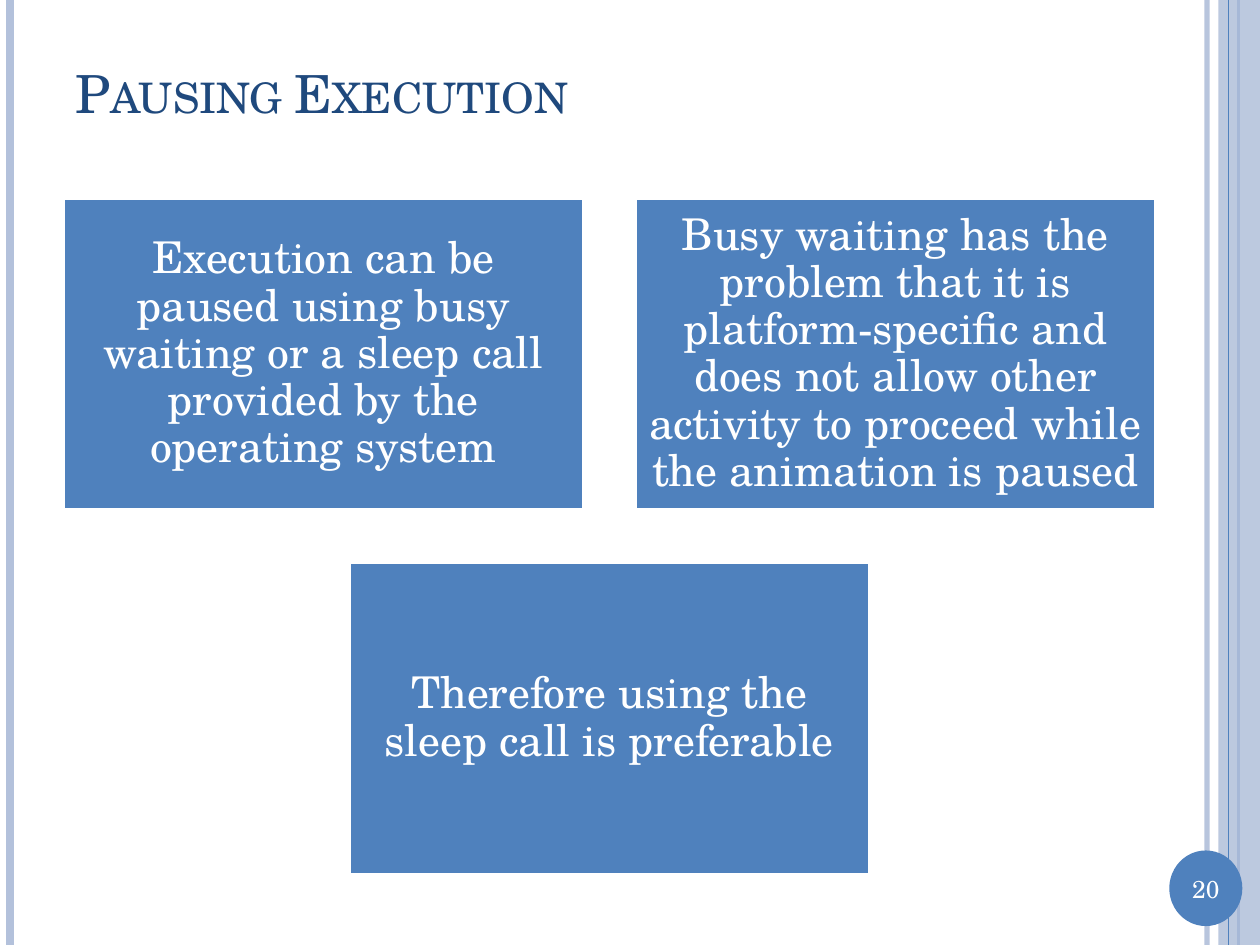
from lxml import etree
from pptx import Presentation
from pptx import util as u
from pptx.dml.color import RGBColor
from pptx.enum import shapes, text
from pptx.oxml import ns

# Content
TITLE = "Pausing Execution"
PAGE = "20"
CARD_ROWS = [
    [
        "Execution can be paused using busy waiting or a sleep call "
        "provided by the operating system",
        "Busy waiting has the problem that it is platform-specific and does "
        "not allow other activity to proceed while the animation is paused",
    ],
    ["Therefore using the sleep call is preferable"],
]

THEME = {
    "font": "TeX Gyre Schola",
    "navy": "1F497D", "blue": "4F81BD", "pale": "B3C1DB", "white": "FFFFFF",
    "title_pt": 30, "card_pt": 25, "page_pt": 14,
}

# Layout, in inches
WIDTH, HEIGHT = 10, 7.5
LEFT, CONTENT_W = 0.5, 8.67
CARD_TOP, CARD_W, CARD_H, GAP = 1.57, 4.13, 2.48, 0.41
BADGE = (9.28, 6.75, 0.58, 0.6)
BAND = (9.67, 0, 0.33, HEIGHT)
# x, colour, width in points, opacity in percent
RULES_BEHIND = [(9.58, "pale", 3, 93), (0.08, "pale", 4.5, 100),
                (9.83, "blue", 1.5, 100)]
RULES_FRONT = [(9.75, "blue", 0.75, 100)]

deck = Presentation()
deck.slide_width, deck.slide_height = u.Inches(WIDTH), u.Inches(HEIGHT)
slide = deck.slides.add_slide(deck.slide_layouts[6])


def inches(values):
    return [u.Inches(value) for value in values]


def color(name):
    return RGBColor.from_string(THEME[name])


def set_opacity(part, percent):
    if percent < 100:
        tone = next(part._element.spPr.iter(ns.qn("a:srgbClr")))
        etree.SubElement(tone, ns.qn("a:alpha")).set("val", str(percent * 1000))


def add_rule(x, tone, points, opacity):
    rule = slide.shapes.add_connector(
        shapes.MSO_CONNECTOR.STRAIGHT, *inches((x, 0, x, HEIGHT)))
    rule.line.color.rgb = color(tone)
    rule.line.width = u.Pt(points)
    set_opacity(rule, opacity)
    etree.SubElement(rule._element.spPr, ns.qn("a:effectLst"))


def add_block(kind, at, tone, opacity=100, border=None):
    block = slide.shapes.add_shape(kind, *inches(at))
    block.shadow.inherit = False
    block.fill.solid()
    block.fill.fore_color.rgb = color(tone)
    set_opacity(block, opacity)
    if border:
        block.line.color.rgb = color(border)
        block.line.width = u.Pt(2)
    else:
        block.line.fill.background()
    return block


def write(holder, words, size, tone, align=text.PP_ALIGN.CENTER,
          inset=(0.1, 0.05), spacing=1.0, small_caps=False):
    frame = holder.text_frame
    frame.word_wrap = True
    frame.vertical_anchor = text.MSO_ANCHOR.MIDDLE
    frame.margin_left = frame.margin_right = u.Inches(inset[0])
    frame.margin_top = frame.margin_bottom = u.Inches(inset[1])
    paragraph = frame.paragraphs[0]
    paragraph.alignment = align
    paragraph.line_spacing = spacing
    run = paragraph.add_run()
    run.text = words
    run.font.name = THEME["font"]
    run.font.size = u.Pt(THEME[size])
    run.font.color.rgb = color(tone)
    if small_caps:
        run._r.get_or_add_rPr().set("cap", "small")


# Side rules and band
for rule_values in RULES_BEHIND:
    add_rule(*rule_values)
add_block(shapes.MSO_SHAPE.RECTANGLE, BAND, "pale", opacity=87)
for rule_values in RULES_FRONT:
    add_rule(*rule_values)

# Page number badge
badge = add_block(shapes.MSO_SHAPE.OVAL, BADGE, "blue")
page_number = slide.shapes.add_textbox(
    *inches((BADGE[0], BADGE[1] + 0.13, BADGE[2], 0.34)))
write(page_number, PAGE, "page_pt", "white")

# Title
title = slide.shapes.add_textbox(*inches((LEFT, 0.3, CONTENT_W, 0.87)))
write(title, TITLE, "title_pt", "navy", align=text.PP_ALIGN.LEFT,
      small_caps=True)

# Cards, each row centred in the content width
for row, cards in enumerate(CARD_ROWS):
    row_width = len(cards) * (CARD_W + GAP) - GAP
    row_left = LEFT + (CONTENT_W - row_width) / 2
    for column, statement in enumerate(cards):
        at = (row_left + column * (CARD_W + GAP),
              CARD_TOP + row * (CARD_H + GAP), CARD_W, CARD_H)
        card = add_block(shapes.MSO_SHAPE.RECTANGLE, at, "blue", border="white")
        write(card, statement, "card_pt", "white", inset=(0.1, 0.1), spacing=0.9)

deck.save("out.pptx")
